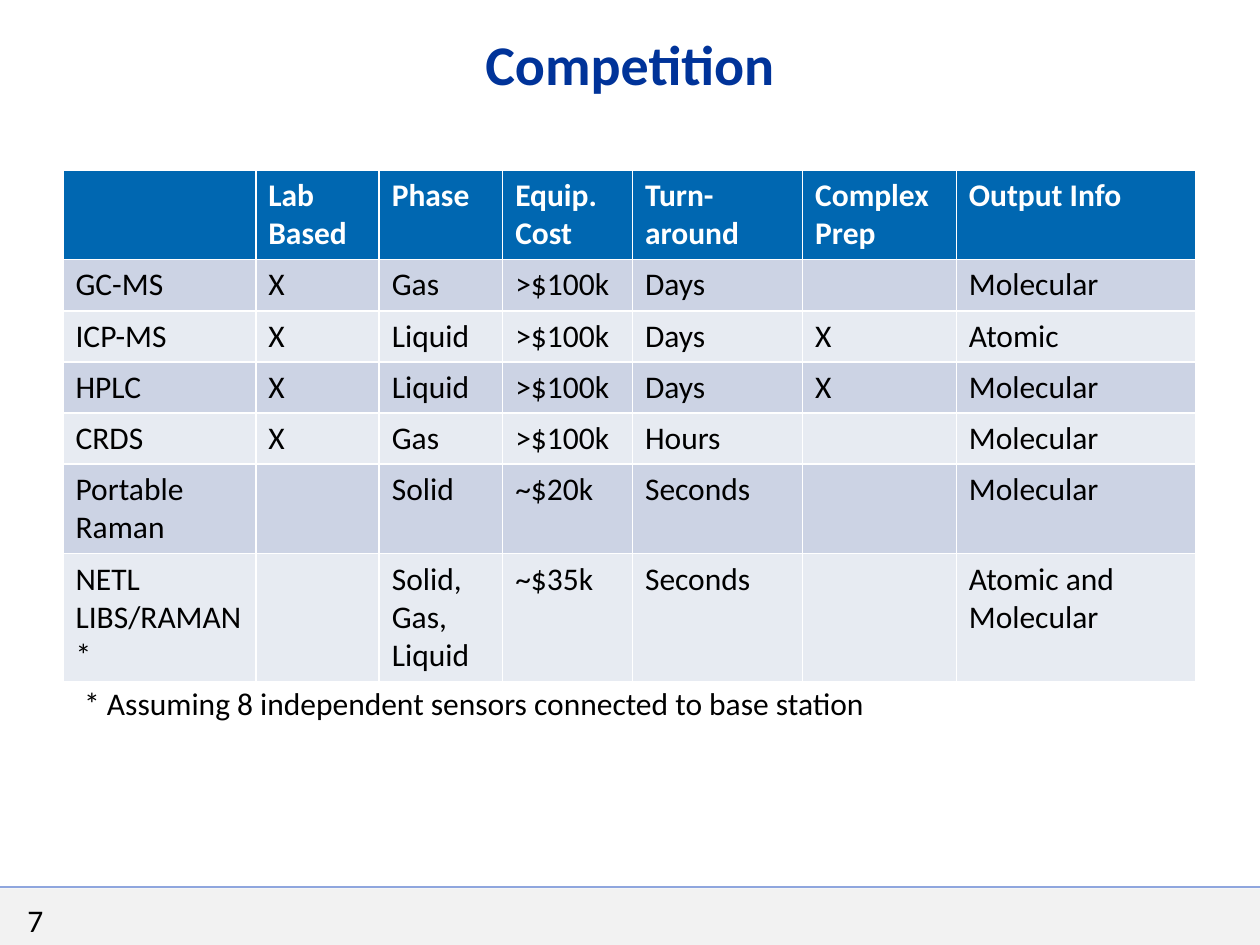
import pptx
import pptx.dml.color
import pptx.enum.shapes
import pptx.enum.text
import pptx.oxml.ns
import pptx.util
from pptx.dml.color import RGBColor

WHITE = RGBColor(0xFF, 0xFF, 0xFF)
BLACK = RGBColor(0x00, 0x00, 0x00)
NAVY = RGBColor(0x00, 0x33, 0x99)
HEADER_BLUE = RGBColor(0x00, 0x67, 0xB1)
BAND_DARK = RGBColor(0xCC, 0xD3, 0xE4)
BAND_LIGHT = RGBColor(0xE7, 0xEB, 0xF2)
FOOTER_GREY = RGBColor(0xF2, 0xF2, 0xF2)
FOOTER_LINE = RGBColor(0x8F, 0xA6, 0xDE)

# The grid has 100 columns and 75 rows, each a tenth of an inch
COLUMNS, ROWS = 100, 75
COLUMN_WIDTHS = [15.3, 9.8, 9.8, 10.3, 13.5, 12.2, 19]
ROW_HEIGHT = 4.06

COMPARISON = [
    ["", "Lab Based", "Phase", "Equip. Cost", "Turn-around", "Complex Prep", "Output Info"],
    ["GC-MS", "X", "Gas", ">$100k", "Days", "", "Molecular"],
    ["ICP-MS", "X", "Liquid", ">$100k", "Days", "X", "Atomic"],
    ["HPLC", "X", "Liquid", ">$100k", "Days", "X", "Molecular"],
    ["CRDS", "X", "Gas", ">$100k", "Hours", "", "Molecular"],
    ["Portable Raman", "", "Solid", "~$20k", "Seconds", "", "Molecular"],
    ["NETL LIBS/RAMAN *", "", "Solid, Gas, Liquid", "~$35k", "Seconds", "", "Atomic and Molecular"],
]


class SlideBuilder:
    font_name = "Calibri"
    body_size = 18
    title_size = 32

    def __init__(self, presentation):
        self.unit = presentation.slide_width // COLUMNS
        self.slide = presentation.slides.add_slide(presentation.slide_layouts[5])

    def grid(self, *lengths):
        return [pptx.util.Emu(round(length * self.unit)) for length in lengths]

    def add_text(self, paragraph, text, color=BLACK, size=body_size, bold=False):
        run = paragraph.add_run()
        run.text = text
        run.font.name = self.font_name
        run.font.size = pptx.util.Pt(size)
        run.font.bold = bold
        run.font.color.rgb = color

    def title(self, text, *box):
        shape = self.slide.shapes.title
        shape.left, shape.top, shape.width, shape.height = self.grid(*box)
        shape.text_frame.vertical_anchor = pptx.enum.text.MSO_ANCHOR.MIDDLE
        paragraph = shape.text_frame.paragraphs[0]
        paragraph.alignment = pptx.enum.text.PP_ALIGN.CENTER
        self.add_text(paragraph, text, NAVY, self.title_size, True)

    def rectangle(self, fill, *box):
        shape = self.slide.shapes.add_shape(
            pptx.enum.shapes.MSO_SHAPE.RECTANGLE, *self.grid(*box))
        shape.shadow.inherit = False
        shape.fill.solid()
        shape.fill.fore_color.rgb = fill
        shape.line.fill.background()

    def line(self, color, width, *ends):
        connector = self.slide.shapes.add_connector(
            pptx.enum.shapes.MSO_CONNECTOR.STRAIGHT, *self.grid(*ends))
        connector.line.color.rgb = color
        connector.line.width = pptx.util.Pt(width)
        properties = connector._element.spPr
        properties.append(properties.makeelement(pptx.oxml.ns.qn("a:effectLst"), {}))

    def label(self, text, *box):
        frame = self.slide.shapes.add_textbox(*self.grid(*box)).text_frame
        frame.word_wrap = False
        frame.auto_size = pptx.enum.text.MSO_AUTO_SIZE.SHAPE_TO_FIT_TEXT
        self.add_text(frame.paragraphs[0], text)

    def table(self, content, left, top):
        # The default table style supplies the white cell borders
        box = self.grid(left, top, sum(COLUMN_WIDTHS), ROW_HEIGHT * len(content))
        table = self.slide.shapes.add_table(len(content), len(COLUMN_WIDTHS), *box).table
        for column, width in zip(table.columns, self.grid(*COLUMN_WIDTHS)):
            column.width = width
        for index, texts in enumerate(content):
            header = index == 0
            band = BAND_DARK if index % 2 else BAND_LIGHT
            for cell, text in zip(table.rows[index].cells, texts):
                cell.fill.solid()
                cell.fill.fore_color.rgb = HEADER_BLUE if header else band
                if text:
                    self.add_text(cell.text_frame.paragraphs[0], text,
                                  WHITE if header else BLACK, bold=header)


def main():
    presentation = pptx.Presentation()
    presentation.slide_width = pptx.util.Inches(10)
    presentation.slide_height = pptx.util.Inches(7.5)
    builder = SlideBuilder(presentation)

    # Footer band
    builder.rectangle(FOOTER_GREY, 0, 70.5, COLUMNS, ROWS - 70.5)
    builder.line(FOOTER_LINE, 1.5, 0, 70.4, COLUMNS, 70.4)

    # Title, comparison table and its footnote
    builder.title("Competition", 5, 1.8, 90, 6.4)
    builder.table(COMPARISON, 5, 13.5)
    builder.label("* Assuming 8 independent sensors connected to base station",
                  5.7, 53.8, 64.7, 4)

    # Slide number
    builder.label("7", 1.2, 71, 3.3, 4)

    presentation.save("out.pptx")


if __name__ == "__main__":
    main()
